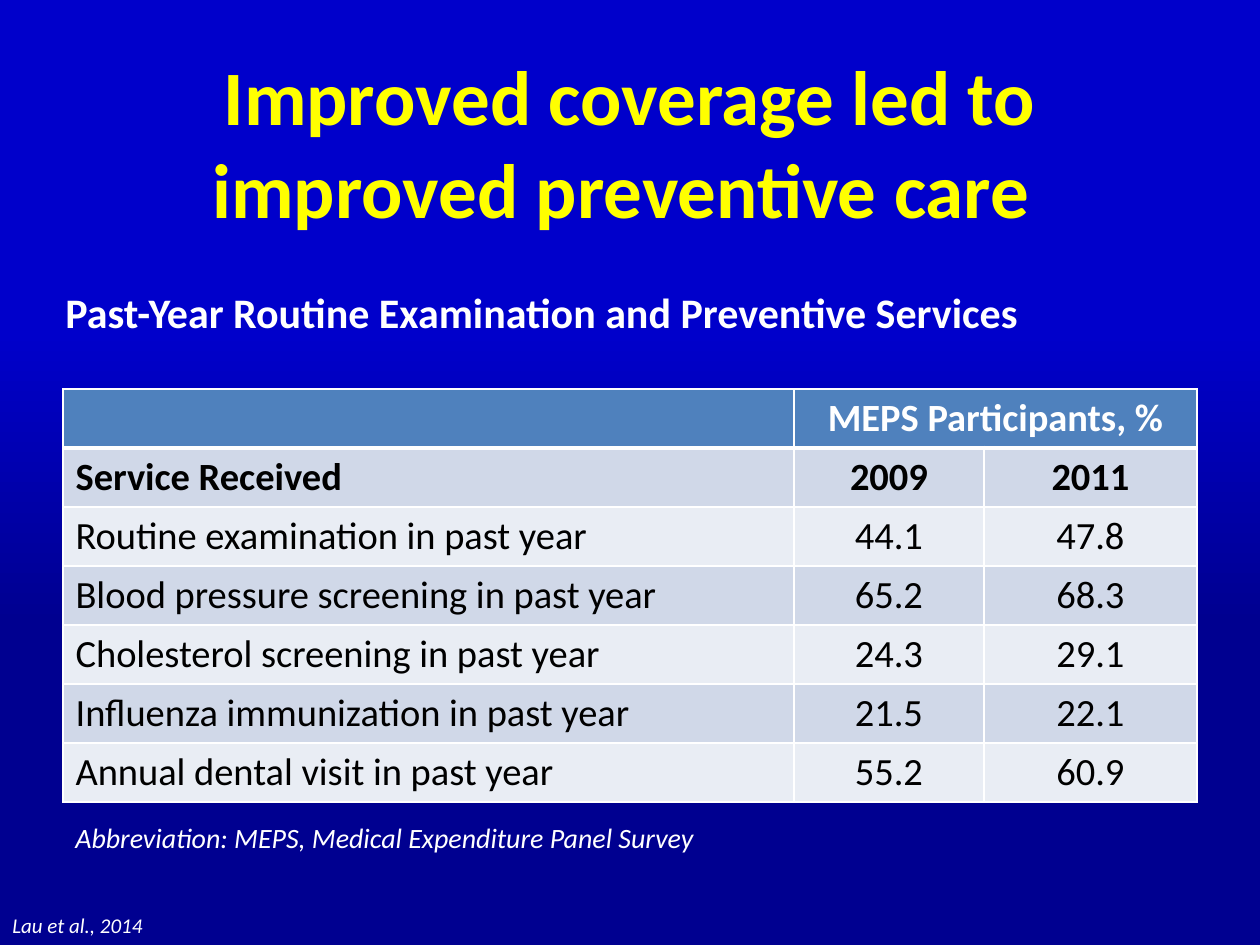
from dataclasses import dataclass

from lxml import etree
from pptx import Presentation
from pptx.dml.color import RGBColor
from pptx.enum.text import MSO_ANCHOR, PP_ALIGN
from pptx.oxml.ns import qn
from pptx.util import Emu, Pt

LEFT, CENTER = PP_ALIGN.LEFT, PP_ALIGN.CENTER
TOP, MIDDLE = MSO_ANCHOR.TOP, MSO_ANCHOR.MIDDLE


@dataclass(frozen=True)
class Theme:
    font: str = "Calibri"
    white: str = "FFFFFF"
    black: str = "000000"
    yellow: str = "FFFF00"
    header: str = "4F81BD"
    bands: tuple = ("D0D8E8", "E9EDF4")
    background: tuple = ((0.34, "000090"), (0.65, "0000CB"))
    title: int = 44
    subtitle: int = 24
    table: int = 22
    note: int = 16
    source: int = 12


THEME = Theme()

# Content: text, box in px, size, colour, bold, italic, alignment, anchor, wrap
TEXTS = [
    ("Improved coverage led to improved preventive care ", (63, 62, 1134, 158),
     THEME.title, THEME.yellow, True, False, CENTER, MIDDLE, True),
    ("Past-Year Routine Examination and Preventive Services", (53, 280, 1173, 63),
     THEME.subtitle, THEME.white, True, False, LEFT, TOP, True),
    ("Abbreviation: MEPS, Medical Expenditure Panel Survey", (63, 814, 651, 47),
     THEME.note, THEME.white, False, True, LEFT, TOP, False),
    ("Lau et al., 2014", (0, 906, 735, 38),
     THEME.source, THEME.white, False, True, LEFT, TOP, True),
]
ROWS = [
    ("", "MEPS Participants, %", ""),
    ("Service Received", "2009", "2011"),
    ("Routine examination in past year", "44.1", "47.8"),
    ("Blood pressure screening in past year", "65.2", "68.3"),
    ("Cholesterol screening in past year", "24.3", "29.1"),
    ("Influenza immunization in past year", "21.5", "22.1"),
    ("Annual dental visit in past year", "55.2", "60.9"),
]
TABLE_LEFT, TABLE_TOP = 63, 389
COLUMN_WIDTHS = (731, 190, 213)
ROW_HEIGHT = 59


def px(count):
    return Emu(count * 914400 // 126)


def style(paragraph, size, color, bold=False, italic=False, align=LEFT):
    paragraph.alignment = align
    for span in paragraph.runs:
        span.font.name = THEME.font
        span.font.size = Pt(size)
        span.font.bold = bold
        span.font.italic = italic
        span.font.color.rgb = RGBColor.from_string(color)


def add_text(page, text, place, size, color, bold, italic, align, anchor, wrap):
    box = page.shapes.add_textbox(*map(px, place))
    frame = box.text_frame
    frame.word_wrap = wrap
    frame.vertical_anchor = anchor
    frame.text = text
    style(frame.paragraphs[0], size, color, bold, italic, align)


def set_borders(cell, bottom_width):
    properties = cell._tc.get_or_add_tcPr()
    for side, width in (("L", 1), ("R", 1), ("T", 1), ("B", bottom_width)):
        line = etree.SubElement(properties, qn(f"a:ln{side}"), w=str(Pt(width)))
        fill = etree.SubElement(line, qn("a:solidFill"))
        etree.SubElement(fill, qn("a:srgbClr"), val=THEME.white)


def add_services_table(page):
    place = (TABLE_LEFT, TABLE_TOP, sum(COLUMN_WIDTHS), ROW_HEIGHT * len(ROWS))
    table = page.shapes.add_table(len(ROWS), len(COLUMN_WIDTHS), *map(px, place)).table
    for column, width in zip(table.columns, COLUMN_WIDTHS):
        column.width = px(width)
    table.cell(0, 1).merge(table.cell(0, 2))

    for row_index, values in enumerate(ROWS):
        is_header = row_index == 0
        table.rows[row_index].height = px(ROW_HEIGHT)
        fill = THEME.header if is_header else THEME.bands[(row_index - 1) % 2]
        color = THEME.white if is_header else THEME.black
        for column_index, value in enumerate(values):
            cell = table.cell(row_index, column_index)
            set_borders(cell, 3 if is_header else 1)
            cell.fill.solid()
            cell.fill.fore_color.rgb = RGBColor.from_string(fill)
            if value:
                cell.text_frame.text = value
                style(cell.text_frame.paragraphs[0], THEME.table, color,
                      bold=row_index < 2, align=CENTER if column_index else LEFT)


def main():
    deck = Presentation()
    deck.slide_width, deck.slide_height = px(1260), px(945)
    page = deck.slides.add_slide(deck.slide_layouts[6])

    # Background, dark at the bottom
    backdrop = page.background.fill
    backdrop.gradient()
    backdrop.gradient_angle = 90
    for stop, (position, color) in zip(backdrop.gradient_stops, THEME.background):
        stop.position = position
        stop.color.rgb = RGBColor.from_string(color)

    # Title, subtitle and notes
    for item in TEXTS:
        add_text(page, *item)

    # Services received
    add_services_table(page)
    deck.save("out.pptx")


if __name__ == "__main__":
    main()
